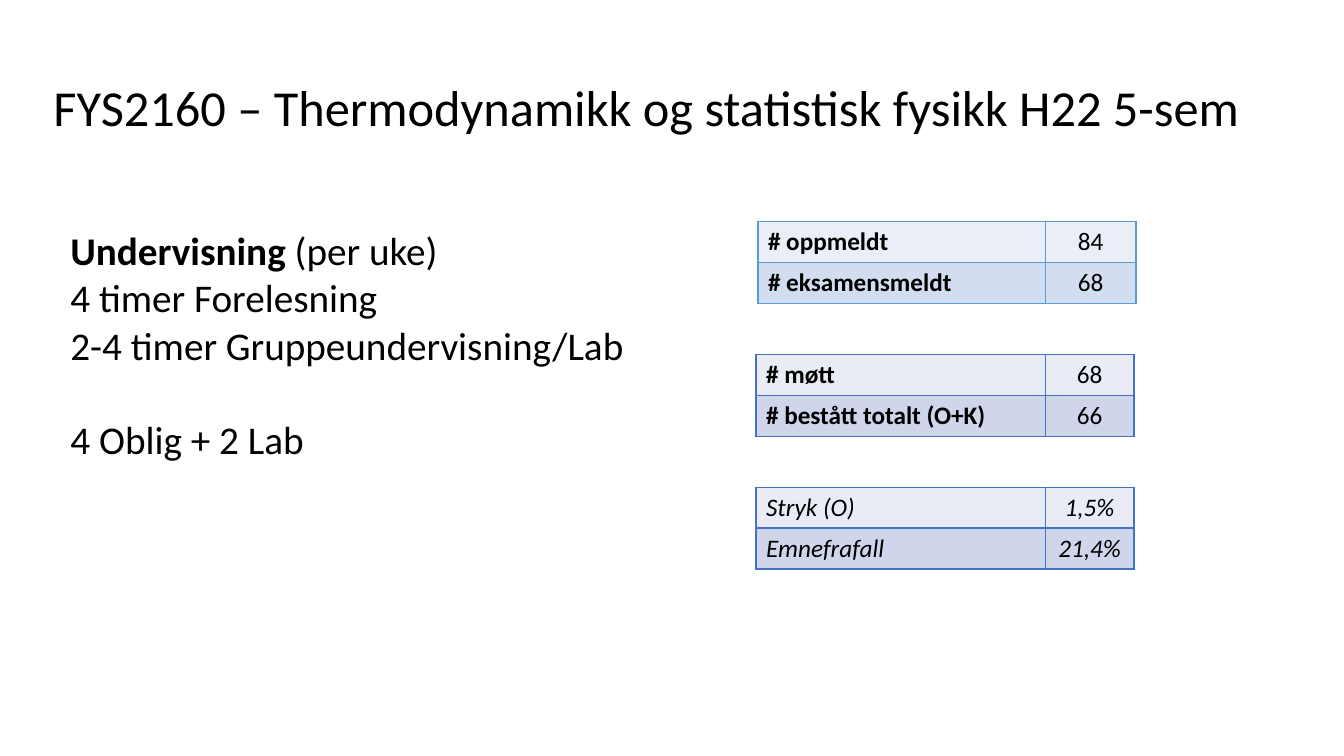
from dataclasses import dataclass

from lxml import etree
from pptx import Presentation
from pptx.dml.color import RGBColor
from pptx.enum import text
from pptx.oxml import ns
from pptx.util import Pt

COLORS = {
    "ink": "000000",
    "blue_line": "5B9BD5",
    "blue_light": "EAEFF7",
    "blue_dark": "D2DEEF",
    "indigo_line": "4472C4",
    "indigo_light": "E9EBF5",
    "indigo_dark": "CFD5EA",
}
TABLE_TOP, TABLE_PITCH, ROW_HEIGHT = 158.4, 94.8, 29.2
LINE_HEIGHT = 34.2


@dataclass(frozen=True)
class StatTable:
    left: float
    widths: tuple[float, float]
    theme: str
    rows: tuple[tuple[str, str], ...]
    bold_labels: bool = False
    italic: bool = False


STAT_TABLES = (
    StatTable(541.4, (205.2, 64.8), "blue",
              (("# oppmeldt", "84"), ("# eksamensmeldt", "68")), bold_labels=True),
    StatTable(540, (206.6, 63.4), "indigo",
              (("# møtt", "68"), ("# bestått totalt (O+K)", "66")), bold_labels=True),
    StatTable(540, (206.6, 63.4), "indigo",
              (("Stryk (O)", "1,5%"), ("Emnefrafall", "21,4%")), italic=True),
)
TEACHING_LINES = (
    (("Undervisning ", True), ("(per uke)", False)),
    (("4 timer Forelesning", False),),
    (("2-4 timer Gruppeundervisning/Lab", False),),
    (("4 Oblig + 2 Lab", False),),
)


def add_run(paragraph, content: str, size: float, bold: bool = False, italic: bool = False) -> None:
    run = paragraph.add_run()
    run.text = content
    values = {"name": "Calibri", "size": Pt(size), "bold": bold, "italic": italic}
    for name, value in values.items():
        setattr(run.font, name, value)
    run.font.color.rgb = RGBColor.from_string(COLORS["ink"])


def place(shape, left: float, top: float, width: float, height: float) -> None:
    for name, value in {"left": left, "top": top, "width": width, "height": height}.items():
        setattr(shape, name, Pt(value))


def add_borders(cell, color: str) -> None:
    properties = cell._tc.get_or_add_tcPr()
    for side in ("a:lnL", "a:lnR", "a:lnT", "a:lnB"):
        line = etree.SubElement(properties, ns.qn(side), w=str(Pt(1)))
        fill = etree.SubElement(line, ns.qn("a:solidFill"))
        etree.SubElement(fill, ns.qn("a:srgbClr"), val=color)


def add_stat_table(slide, stat: StatTable, top: float) -> None:
    row_count = len(stat.rows)
    frame = slide.shapes.add_table(row_count, 2, Pt(stat.left), Pt(top),
                                   Pt(sum(stat.widths)), Pt(ROW_HEIGHT * row_count))
    table = frame.table
    table.first_row = table.horz_banding = False
    for column, width in zip(table.columns, stat.widths):
        column.width = Pt(width)
    for row_index, values in enumerate(stat.rows):
        table.rows[row_index].height = Pt(ROW_HEIGHT)
        shade = "dark" if row_index % 2 else "light"
        for column_index, value in enumerate(values):
            is_label = column_index == 0
            cell = table.cell(row_index, column_index)
            add_borders(cell, COLORS[f"{stat.theme}_line"])
            cell.fill.solid()
            cell.fill.fore_color.rgb = RGBColor.from_string(COLORS[f"{stat.theme}_{shade}"])
            paragraph = cell.text_frame.paragraphs[0]
            paragraph.alignment = text.PP_ALIGN.LEFT if is_label else text.PP_ALIGN.CENTER
            add_run(paragraph, value, 18, stat.bold_labels and is_label, stat.italic)


def add_title(slide) -> None:
    title = slide.shapes.title
    place(title, 31, 51, 884, 51)
    frame = title.text_frame
    values = {"word_wrap": True, "auto_size": text.MSO_AUTO_SIZE.NONE,
              "vertical_anchor": text.MSO_ANCHOR.TOP}
    for name, value in values.items():
        setattr(frame, name, value)
    paragraph = frame.paragraphs[0]
    paragraph.alignment = text.PP_ALIGN.LEFT
    add_run(paragraph, "FYS2160 – Thermodynamikk og statistisk fysikk H22 5-sem", 36)


def add_teaching(slide) -> None:
    box = slide.shapes.add_textbox(Pt(43.2), Pt(158.4), Pt(437.8), Pt(177))
    frame = box.text_frame
    frame.word_wrap = True
    for index, runs in enumerate(TEACHING_LINES):
        paragraph = frame.add_paragraph() if index else frame.paragraphs[0]
        for content, bold in runs:
            add_run(paragraph, content, 28, bold)
    frame.paragraphs[-1].space_before = Pt(LINE_HEIGHT)


def main() -> None:
    presentation = Presentation()
    presentation.slide_width, presentation.slide_height = Pt(960), Pt(540)
    slide = presentation.slides.add_slide(presentation.slide_layouts[5])
    add_title(slide)
    add_teaching(slide)
    for index, stat in enumerate(STAT_TABLES):
        add_stat_table(slide, stat, TABLE_TOP + index * TABLE_PITCH)
    presentation.save("out.pptx")


if __name__ == "__main__":
    main()
